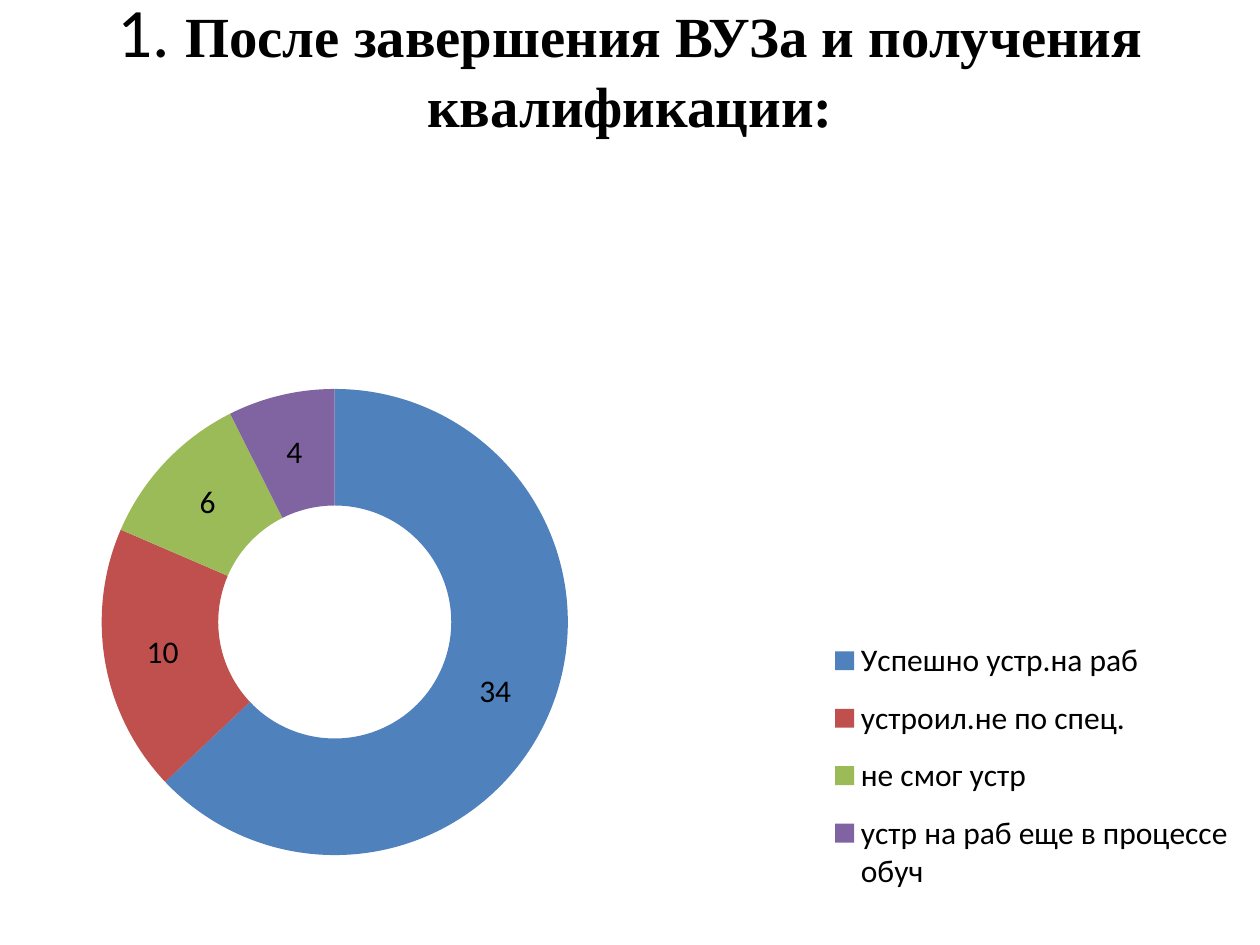
from lxml.etree import SubElement
from pptx import Presentation
from pptx.chart.data import CategoryChartData
from pptx.dml.color import RGBColor
from pptx.enum.chart import XL_CHART_TYPE as CT, XL_LEGEND_POSITION as LP
from pptx.enum.text import MSO_ANCHOR, MSO_AUTO_SIZE, PP_ALIGN
from pptx.oxml.ns import qn
from pptx.util import Cm, Pt

TITLE = [
    ("1. ", "Calibri", 39.6, False),
    ("После завершения ВУЗа и получения квалификации:", "Times New Roman", 32.4, True),
]
ANSWERS = [
    ("Успешно устр.на раб ", 34, "4F81BD"),
    ("устроил.не по спец.", 10, "C0504D"),
    ("не смог устр", 6, "9BBB59"),
    ("устр на раб еще в процессе обуч ", 4, "8064A2"),
]
PLOT_BOX = (0.016, 0.275, 0.476, 0.649)
LEGEND_BOX = (0.65, 0.6, 0.35, 0.4)


def color(hex_text):
    return RGBColor.from_string(hex_text)


def place(parent, box, inner=False):
    for old in parent.findall(qn("c:layout")):
        parent.remove(old)
    layout = SubElement(parent, qn("c:layout"))
    manual = SubElement(layout, qn("c:manualLayout"))
    settings = [("layoutTarget", "inner")] if inner else []
    settings += [("xMode", "edge"), ("yMode", "edge"), *zip("xywh", box)]
    for tag, value in settings:
        SubElement(manual, qn(f"c:{tag}")).set("val", str(value))
    return layout


def add_title(s):
    sp = s.shapes.title
    sp.left, sp.top, sp.width, sp.height = Cm(1.9), Cm(0.58), Cm(21.6), Cm(1.4)
    tf = sp.text_frame
    tf.word_wrap = True
    tf.auto_size = MSO_AUTO_SIZE.NONE
    tf.vertical_anchor = MSO_ANCHOR.MIDDLE
    p = tf.paragraphs[0]
    p.alignment = PP_ALIGN.CENTER
    for text, font, size, bold in TITLE:
        r = p.add_run()
        r.text = text
        r.font.name, r.font.size, r.font.bold = font, Pt(size), bold
        r.font.color.rgb = color("000000")


def add_doughnut(s):
    data = CategoryChartData()
    data.categories = [name for name, _, _ in ANSWERS]
    data.add_series("Series 1", [value for _, value, _ in ANSWERS])
    chart = s.shapes.add_chart(
        CT.DOUGHNUT, Cm(0.5), Cm(3.86), Cm(24.6), Cm(14.48), data
    ).chart
    chart.has_title = False
    chart.font.name, chart.font.size = "Calibri", Pt(18)
    chart.font.color.rgb = color("000000")

    plot = chart.plots[0]
    plot.vary_by_categories = True
    plot.has_data_labels = True
    plot.data_labels.show_value = True
    plot.data_labels.show_percentage = False
    for i, (_, _, fill_color) in enumerate(ANSWERS):
        fill = plot.series[0].points[i].format.fill
        fill.solid()
        fill.fore_color.rgb = color(fill_color)

    chart.has_legend = True
    legend = chart.legend
    legend.position = LP.RIGHT
    legend.include_in_layout = False
    area = chart.element.find(".//" + qn("c:plotArea"))
    area.insert(0, place(area, PLOT_BOX, inner=True))
    legend_el = chart.element.find(".//" + qn("c:legend"))
    layout = place(legend_el, LEGEND_BOX)
    legend_el.find(qn("c:legendPos")).addnext(layout)
    chart.element.find(".//" + qn("c:holeSize")).set("val", "50")


prs = Presentation()
prs.slide_width, prs.slide_height = Cm(25.4), Cm(19.05)
s = prs.slides.add_slide(prs.slide_layouts[5])
add_title(s)
add_doughnut(s)
prs.save("out.pptx")
